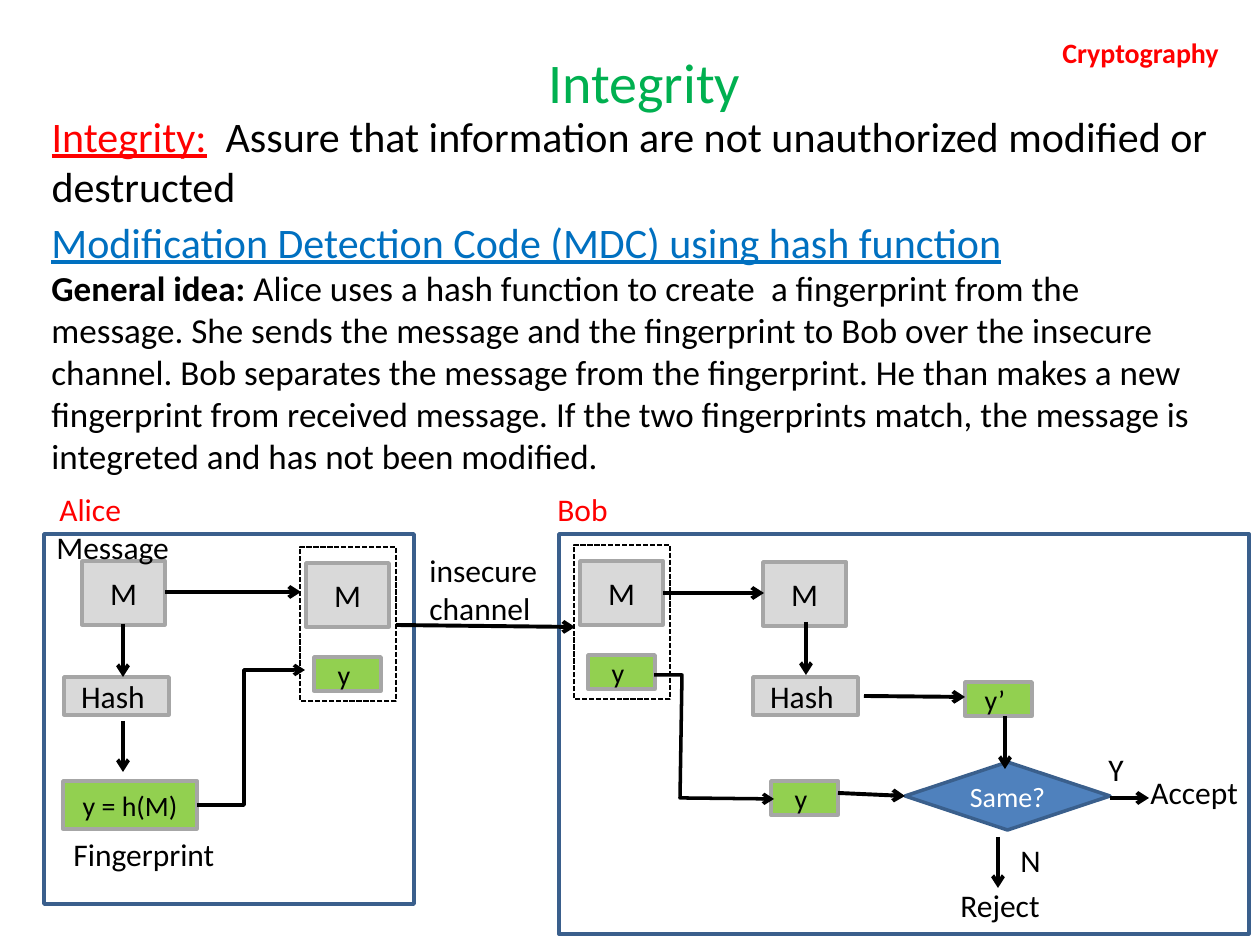
"""Build the slide on message integrity with a hash function."""
import pptx
import pptx.dml.color
import pptx.enum.dml
import pptx.enum.shapes
import pptx.enum.text
import pptx.oxml
import pptx.oxml.ns
import pptx.util

UNIT = 914400 / 126
KIND = pptx.enum.shapes.MSO_SHAPE
ALIGN = pptx.enum.text.PP_ALIGN
MID = pptx.enum.text.MSO_ANCHOR.MIDDLE
GRAY, GREEN, EDGE, NAVY = "D9D9D9", "92D050", "A6A6A6", "3A5F8C"
BLACK, RED = "000000", "FF0000"


def px(num):
    """Turn pixels into EMU."""
    return pptx.util.Emu(round(num * UNIT))


def hue(code):
    """Turn a hex string into a colour."""
    return pptx.dml.color.RGBColor.from_string(code)


def write(para, words, size=18, color=BLACK, bold=False, under=False, gap=0):
    """Add a formatted run, with gap as letter spacing in hundredths of a point."""
    run = para.add_run()
    run.text = words
    font = run.font
    font.name, font.size = "Calibri", pptx.util.Pt(size)
    font.bold, font.underline = bold, under
    font.color.rgb = hue(color)
    if gap:
        run._r.get_or_add_rPr().set("spc", str(gap))


def place(shape, x, y, w, h):
    """Move and size a shape."""
    shape.left, shape.top, shape.width, shape.height = map(px, (x, y, w, h))


def label(slide, x, y, w, h, *lines, **look):
    """Add a text box with one paragraph for each line."""
    frame = slide.shapes.add_textbox(*map(px, (x, y, w, h))).text_frame
    frame.word_wrap = False
    for at, words in enumerate(lines):
        para = frame.add_paragraph() if at else frame.paragraphs[0]
        write(para, words, **look)


def block(slide, x, y, w, h, words="", fill=None, edge=EDGE, kind=KIND.RECTANGLE,
          wide=2, dash=None, shift=0, **look):
    """Add a preset shape with centred text."""
    shape = slide.shapes.add_shape(kind, *map(px, (x, y, w, h)))
    shape.shadow.inherit = False
    if fill:
        shape.fill.solid()
        shape.fill.fore_color.rgb = hue(fill)
    else:
        shape.fill.background()
    shape.line.color.rgb = hue(edge)
    shape.line.width = pptx.util.Pt(wide)
    if dash:
        shape.line.dash_style = dash
    if words:
        frame = shape.text_frame
        frame.word_wrap, frame.vertical_anchor = True, MID
        frame.margin_right += px(shift)
        frame.paragraphs[0].alignment = ALIGN.CENTER
        write(frame.paragraphs[0], words, **look)


def note(slide, x, y):
    """Add a box for the message M."""
    block(slide, x, y, 83, 64, "M", GRAY)


def digest(slide, x, y, words="y"):
    """Add a small box for a fingerprint."""
    block(slide, x, y, 67, 34, words, GREEN, shift=7, size=16)


def hasher(slide, x, y):
    """Add a box for the hash function."""
    block(slide, x, y, 105, 38, "Hash", GRAY, shift=7)


def pack(slide, x, y):
    """Add a message and its fingerprint in a dashed frame."""
    note(slide, x + 6, y + 16)
    digest(slide, x + 14, y + 110)
    block(slide, x, y, 96, 154, edge=BLACK, wide=1,
          dash=pptx.enum.dml.MSO_LINE.SQUARE_DOT)


def point(shape, wide):
    """Give a line its colour, width and arrowhead."""
    shape.line.color.rgb = hue(BLACK)
    shape.line.width = pptx.util.Pt(wide)
    head = f'<a:tailEnd {pptx.oxml.ns.nsdecls("a")} type="arrow"/>'
    line = shape.element.spPr.find(pptx.oxml.ns.qn("a:ln"))
    line.append(pptx.oxml.parse_xml(head))


def arrow(slide, x, y, *ends):
    """Add a straight arrow between two ends measured from x, y."""
    (ax, ay), (bx, by) = ends
    line = slide.shapes.add_connector(
        pptx.enum.shapes.MSO_CONNECTOR.STRAIGHT,
        *map(px, (x + ax, y + ay, x + bx, y + by)))
    point(line, 2.25)
    bare = f'<a:effectLst {pptx.oxml.ns.nsdecls("a")}/>'
    line.element.spPr.append(pptx.oxml.parse_xml(bare))


def bend(slide, x, y, *dots):
    """Add a bent arrow through dots measured from x, y."""
    dots = [(x + dx, y + dy) for dx, dy in dots]
    pen = slide.shapes.build_freeform(*dots[0], scale=UNIT)
    pen.add_line_segments(dots[1:], close=False)
    shape = pen.convert_to_shape()
    shape.shadow.inherit = False
    shape.fill.background()
    point(shape, 2)


def intro(slide, x, y, w):
    """Place the title, the definition and the general idea."""
    title, body = slide.placeholders
    place(title, x + 45, y, 1121, 105)
    title.text_frame.vertical_anchor = MID
    para = title.text_frame.paragraphs[0]
    para.alignment = ALIGN.CENTER
    write(para, "Integrity", size=32, color="00B050")
    label(slide, x + 1011, y, 184, 47, "Cryptography", size=16, color=RED, bold=True)

    place(body, x, y + 61, w, 141)
    body.text_frame.vertical_anchor = MID
    para = body.text_frame.paragraphs[0]
    props = para._p.get_or_add_pPr()
    props.set("marL", "0")
    props.set("indent", "0")
    props.append(pptx.oxml.parse_xml(f'<a:buNone {pptx.oxml.ns.nsdecls("a")}/>'))
    para.space_before = pptx.util.Pt(0)
    write(para, "Integrity:", size=24, color=RED, under=True)
    write(para, " ", size=24, gap=540)
    write(para, "Assure that information are not unauthorized modified or destructed",
          size=24)

    frame = slide.shapes.add_textbox(*map(px, (x, y + 181, w - 36, 276))).text_frame
    frame.word_wrap = True
    write(frame.paragraphs[0], "Modification Detection Code (MDC) using hash function",
          size=24, color="0070C0", under=True)
    para = frame.add_paragraph()
    write(para, "General idea: ", size=20, bold=True)
    write(para, "Alice uses a hash function to create", size=20)
    write(para, " ", size=20, gap=450)
    write(para, "a fingerprint from the message. "
          "She sends the message and the fingerprint to Bob over the insecure channel. "
          "Bob separates the message from the fingerprint. He than makes a new "
          "fingerprint from received message. If the two fingerprints match, the "
          "message is integreted and has not been modified.", size=20)


def alice(slide, x, y, w, h):
    """Draw the sender's side."""
    note(slide, x + 38, y + 27)
    hasher(slide, x + 20, y + 143)
    block(slide, x + 19, y + 247, 134, 48, "y = h(M)", GREEN, size=16)
    pack(slide, x + 256, y + 13)
    for ends in (((121, 58), (257, 58)), ((79, 90), (79, 143)), ((79, 187), (79, 238))):
        arrow(slide, x, y, *ends)
    bend(slide, x, y, (153, 271), (200, 271), (200, 136), (261, 136))
    label(slide, x + 17, y + 295, 168, 50, "Fingerprint")
    label(slide, x, y - 12, 139, 50, "Message")
    label(slide, x + 3, y - 50, 88, 50, "Alice", color=RED)
    block(slide, x, y, w, h, edge=NAVY)


def bob(slide, x, y, w, h):
    """Draw the receiver's side."""
    pack(slide, x + 15, y + 11)
    note(slide, x + 204, y + 28)
    hasher(slide, x + 194, y + 143)
    digest(slide, x + 212, y + 247)
    digest(slide, x + 406, y + 148, "y’")
    block(slide, x + 346, y + 228, 205, 68, "Same?", "4F81BD", NAVY, KIND.DIAMOND,
          size=16, color="FFFFFF")
    for ends in (((104, 59), (205, 59)), ((305, 162), (406, 163)),
                 ((279, 259), (346, 262)), ((551, 264), (590, 264)),
                 ((439, 303), (439, 354)), ((247, 88), (247, 141)),
                 ((446, 182), (446, 235))):
        arrow(slide, x, y, *ends)
    bend(slide, x, y, (95, 141), (123, 141), (121, 264), (215, 265))
    for words, dx, dy, wide in (("Accept", 579, 233, 113), ("Reject", 389, 346, 106),
                                ("Y", 537, 210, 40), ("N", 449, 301, 45)):
        label(slide, x + dx, y + dy, wide, 50, words)
    label(slide, x - 14, y - 50, 77, 50, "Bob", color=RED)
    block(slide, x, y, w, h, edge=NAVY)


def main():
    """Build and save the slide."""
    deck = pptx.Presentation()
    deck.slide_width, deck.slide_height = px(1260), px(945)
    slide = deck.slides.add_slide(deck.slide_layouts[1])
    intro(slide, 39, 29, 1211)
    alice(slide, 44, 534, 370, 370)
    bob(slide, 559, 534, 690, 400)
    arrow(slide, 396, 625, (0, 0), (179, 2))
    label(slide, 417, 545, 142, 89, "insecure", "channel")
    deck.save("out.pptx")


if __name__ == "__main__":
    main()
